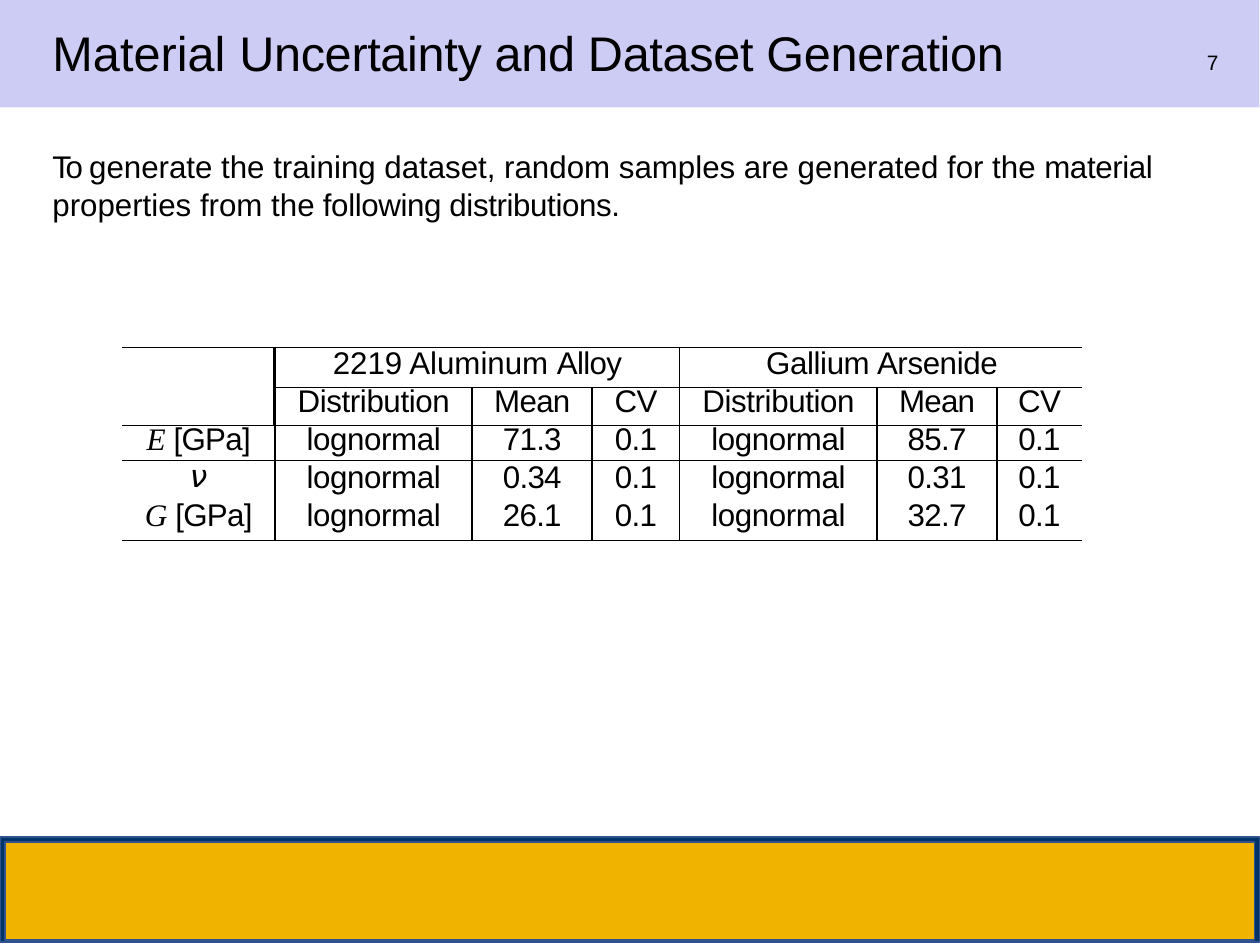
from pptx import Presentation
from pptx.dml.color import RGBColor
from pptx.enum import shapes, text
from pptx.oxml import ns, xmlchemy
from pptx.util import Inches, Pt

TITLE = [("Material ", 0), ("Uncertainty and Dataset Generation", -0.1)]
INTRO = [
    ("To ", -0.7),
    ("generate the training dataset, random samples are generated for the ", 0),
    ("material ", -0.1),
    ("properties from the", 0),
    (" following distributions.", -0.1),
]
PAGE = [("7", -0.5)]
ALIGN = text.PP_ALIGN
MATERIALS = [
    (1, 3, ALIGN.CENTER, [("2219 Aluminum ", 0), ("Alloy", -0.2)]),
    (4, 1, ALIGN.RIGHT, [("Gallium", -0.1)]),
    (5, 2, ALIGN.LEFT, [("Arsenide", -0.1)]),
]
STATS = ["Distribution", "Mean", "CV"]
PROPERTIES = [
    ("E ", "[GPa]", ["lognormal", "71.3", "0.1", "lognormal", "85.7", "0.1"]),
    ("ν", "", ["lognormal", "0.34", "0.1", "lognormal", "0.31", "0.1"]),
    ("G ", "[GPa]", ["lognormal", "26.1", "0.1", "lognormal", "32.7", "0.1"]),
]
COL_WIDTHS = [0.61, 0.79, 0.48, 0.35, 0.79, 0.48, 0.34]
ROW_HEIGHTS = [0.16, 0.15, 0.14, 0.15, 0.17]
LINE_SPACING = [9.7, 9.2, 9.2, 10.1, 10.2]
OPEN_ROWS = (3, 4)
OPEN_HEADER = 5

THEME = {
    "font": "Arial", "math": "Times New Roman", "greek": "DejaVu Sans",
    "title": 14, "body": 9, "page": 6,
    "ink": "000000", "banner": "CCCCF4", "navy": "003366",
    "gold": "F0B300", "edge": "2F528E", "rule": 0.5, "heavy": 1,
}
NO_GRID = "{2D5ABB26-0587-4C30-8999-92F81FD0307C}"


def add_bar(s, box, fill, edge=None):
    sp = s.shapes.add_shape(shapes.MSO_SHAPE.RECTANGLE, *map(Inches, box))
    sp.shadow.inherit = False
    sp.fill.solid()
    sp.fill.fore_color.rgb = RGBColor.from_string(THEME[fill])
    if edge:
        sp.line.color.rgb = RGBColor.from_string(THEME[edge])
        sp.line.width = Pt(THEME["rule"])
    else:
        sp.line.fill.background()


def add_run(p, words, tracking=0, size="body", font="font", italic=False):
    r = p.add_run()
    r.text = words
    r.font.name = THEME[font]
    r.font.size = Pt(THEME[size])
    r.font.italic = italic
    r.font.color.rgb = RGBColor.from_string(THEME["ink"])
    r.font._element.set("spc", str(round(tracking * 100)))


def fill_text(sp, box, runs, size, inset):
    sp.left, sp.top, sp.width, sp.height = map(Inches, box)
    tf = sp.text_frame
    tf.word_wrap = True
    tf.auto_size = text.MSO_AUTO_SIZE.NONE
    tf.vertical_anchor = text.MSO_ANCHOR.TOP
    tf.margin_left = tf.margin_right = tf.margin_bottom = 0
    tf.margin_top = Inches(inset)
    p = tf.paragraphs[0]
    pPr = p._p.get_or_add_pPr()
    pPr.set("marL", "0")
    pPr.set("indent", "0")
    pPr.append(xmlchemy.OxmlElement("a:buNone"))
    p.alignment = ALIGN.LEFT
    p.space_before = Pt(0)
    for words, tracking in runs:
        add_run(p, words, tracking, size)


def set_borders(cell, widths):
    tcPr = cell._tc.get_or_add_tcPr()
    drawn = [(side, w) for side, w in widths.items() if w]
    for i, (side, width) in enumerate(drawn):
        ln = xmlchemy.OxmlElement("a:ln" + side)
        ln.set("w", str(Pt(width)))
        fill = xmlchemy.OxmlElement("a:solidFill")
        color = xmlchemy.OxmlElement("a:srgbClr")
        color.set("val", THEME["ink"])
        fill.append(color)
        ln.append(fill)
        tcPr.insert(i, ln)


def side_rule(r, boundary):
    if boundary in (0, len(COL_WIDTHS)) or (r, boundary) == (0, OPEN_HEADER):
        return 0
    return THEME["heavy"] if (r, boundary) == (0, 1) else THEME["rule"]


def row_rule(boundary):
    return 0 if boundary in OPEN_ROWS else THEME["rule"]


def add_properties_table(s):
    rows, cols = len(ROW_HEIGHTS), len(COL_WIDTHS)
    box = (0.49, 1.39, sum(COL_WIDTHS), sum(ROW_HEIGHTS))
    table = s.shapes.add_table(rows, cols, *map(Inches, box)).table
    table.first_row = table.horz_banding = False
    table._tbl.tblPr.find(ns.qn("a:tableStyleId")).text = NO_GRID
    for col, width in zip(table.columns, COL_WIDTHS):
        col.width = Inches(width)
    for row, height in zip(table.rows, ROW_HEIGHTS):
        row.height = Inches(height)

    table.cell(0, 0).merge(table.cell(1, 0))
    content, aligned = {}, {}
    for c, span, align, runs in MATERIALS:
        if span > 1:
            table.cell(0, c).merge(table.cell(0, c + span - 1))
        content[0, c], aligned[0, c] = runs, align
    for c, stat in enumerate(STATS * 2, 1):
        content[1, c] = [(stat, -0.1 if stat == "Distribution" else -0.2)]
    for r, (symbol, unit, values) in enumerate(PROPERTIES, 2):
        font = "math" if unit else "greek"
        content[r, 0] = [(symbol, 0, "body", font, True)]
        if unit:
            content[r, 0].append((unit, -0.2))
        for c, value in enumerate(values, 1):
            content[r, c] = [(value, -0.1 if value == "lognormal" else -0.2)]

    for r in range(rows):
        for c in range(cols):
            cell = table.cell(r, c)
            cell.fill.background()
            align = aligned.get((r, c), ALIGN.CENTER)
            cell.margin_left = cell.margin_top = cell.margin_bottom = 0
            cell.margin_right = Inches(0.03 if align == ALIGN.RIGHT else 0)
            p = cell.text_frame.paragraphs[0]
            p.alignment = align
            p.line_spacing = Pt(LINE_SPACING[r])
            p._p.get_or_add_endParaRPr().set("sz", str(THEME["body"] * 100))
            for run in content.get((r, c), []):
                add_run(p, *run)
            if not cell.is_spanned:
                set_borders(cell, {
                    "L": side_rule(r, c),
                    "R": side_rule(r, c + cell.span_width),
                    "T": row_rule(r),
                    "B": row_rule(r + cell.span_height),
                })


def main():
    prs = Presentation()
    prs.slide_width, prs.slide_height = Pt(363), Pt(272.5)
    prs.element.find(ns.qn("p:sldSz")).attrib.pop("type", None)
    s = prs.slides.add_slide(prs.slide_layouts[1])
    add_bar(s, (0, 3.35, 5.04, 0.42), "navy", "edge")
    add_bar(s, (0.02, 3.37, 5, 0.39), "gold", "edge")
    add_bar(s, (0, 0, 5.04, 0.43), "banner")
    title, body = s.placeholders
    for sp in (title, body):
        s.shapes._spTree.append(sp._element)
    fill_text(title, (0.21, 0.07, 3.91, 0.25), TITLE, "title", 0.02)
    fill_text(body, (0.21, 0.58, 4.44, 0.33), INTRO, "body", 0.01)
    add_properties_table(s)
    page = s.shapes.add_textbox(0, 0, 0, 0)
    fill_text(page, (4.83, 0.19, 0.07, 0.11), PAGE, "page", 0.01)
    prs.save("out.pptx")


if __name__ == "__main__":
    main()
